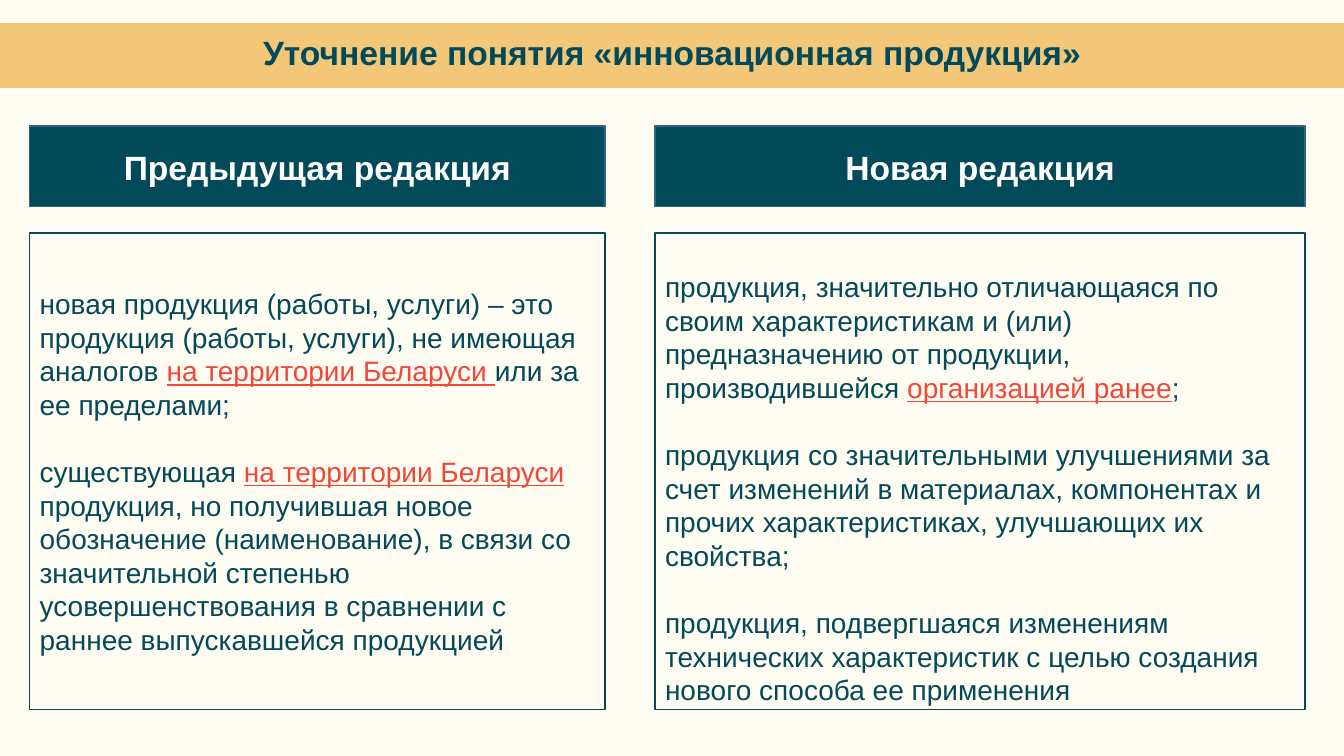
"""Build a slide comparing two wordings of a definition."""
import dataclasses
import typing

import pptx
import pptx.dml.color
import pptx.enum.shapes
import pptx.enum.text
import pptx.util

Cm = pptx.util.Cm
Pt = pptx.util.Pt
RGBColor = pptx.dml.color.RGBColor
ALIGN = pptx.enum.text.PP_ALIGN

CREAM = RGBColor(0xFF, 0xFC, 0xF2)
GOLD = RGBColor(0xF2, 0xC7, 0x77)
TEAL = RGBColor(0x02, 0x49, 0x59)
BLUE = RGBColor(0x30, 0x66, 0x84)
WHITE = RGBColor(0xFF, 0xFF, 0xFF)
RED = RGBColor(0xF2, 0x47, 0x38)

WIDTH, HEIGHT = 33.87, 19.05
LEADING = Pt(24)
HEAD = {"name": "Arial", "size": Pt(24), "bold": True}
BODY = {"name": "Arial", "size": Pt(20), "bold": False}
LEFT = {"alignment": ALIGN.LEFT, "line_spacing": LEADING}
CENTER = {"alignment": ALIGN.CENTER}
Paras = tuple[tuple[str, ...], ...]


@dataclasses.dataclass(frozen=True)
class Panel:
    """A filled or outlined rectangle with text; odd runs are marked."""
    left: float
    top: float
    width: float
    height: float
    paras: Paras
    fill: typing.Optional[RGBColor]
    line: RGBColor
    color: RGBColor
    font: dict[str, typing.Any]
    layout: dict[str, typing.Any]
    weight: float = 1
    inset: float = 0.13


@dataclasses.dataclass(frozen=True)
class Column:
    """A heading over a definition."""
    left: float
    width: float
    title: str
    paras: Paras
    inset: float


COLUMNS = (
    Column(0.75, 14.5, "Предыдущая редакция", (
        ("новая продукция (работы, услуги) – это продукция (работы, услуги), "
         "не имеющая аналогов ", "на территории Беларуси ",
         "или за ее пределами;"),
        ("существующая ", "на территории Беларуси ",
         "продукция, но получившая новое обозначение (наименование), в связи "
         "со значительной степенью усовершенствования в сравнении с раннее "
         "выпускавшейся продукцией"),
    ), 0.13),
    Column(16.51, 16.38, "Новая редакция", (
        ("продукция, значительно отличающаяся по своим характеристикам и "
         "(или) предназначению от продукции, производившейся ",
         "организацией ранее", ";"),
        ("продукция со значительными улучшениями за счет изменений в "
         "материалах, компонентах и прочих характеристиках, улучшающих их "
         "свойства;",),
        ("продукция, подвергшаяся изменениям технических характеристик с "
         "целью создания нового способа ее применения",),
    ), 0.97),
)


def apply(target: typing.Any, values: dict[str, typing.Any]) -> None:
    """Set each named attribute on the target."""
    for name, value in values.items():
        setattr(target, name, value)


def write(frame: typing.Any, panel: Panel) -> None:
    """Fill a text frame with the panel's paragraphs."""
    apply(frame, {
        "word_wrap": True,
        "vertical_anchor": pptx.enum.text.MSO_ANCHOR.MIDDLE,
        "margin_top": Cm(panel.inset),
    })
    for row, runs in enumerate(panel.paras):
        para = frame.add_paragraph() if row else frame.paragraphs[0]
        apply(para, panel.layout)
        if row:
            para.space_before = LEADING
        for index, text in enumerate(runs):
            marked = index % 2 == 1
            run = para.add_run()
            run.text = text
            apply(run.font, {**panel.font, "underline": marked})
            run.font.color.rgb = RED if marked else panel.color


def draw(slide: typing.Any, panel: Panel) -> None:
    """Add one panel to the slide."""
    shape = slide.shapes.add_shape(
        pptx.enum.shapes.MSO_SHAPE.RECTANGLE, Cm(panel.left), Cm(panel.top),
        Cm(panel.width), Cm(panel.height))
    shape.shadow.inherit = False
    if panel.fill is None:
        shape.fill.background()
    else:
        shape.fill.solid()
        shape.fill.fore_color.rgb = panel.fill
    shape.line.color.rgb = panel.line
    shape.line.width = Pt(panel.weight)
    write(shape.text_frame, panel)


def main() -> None:
    """Build and save the slide."""
    deck = pptx.Presentation()
    apply(deck, {"slide_width": Cm(WIDTH), "slide_height": Cm(HEIGHT)})
    slide = deck.slides.add_slide(deck.slide_layouts[6])
    slide.background.fill.solid()
    slide.background.fill.fore_color.rgb = CREAM
    draw(slide, Panel(
        0, 0.61, WIDTH, 1.57,
        (("Уточнение понятия «инновационная продукция»",),),
        GOLD, GOLD, TEAL, HEAD, {**CENTER, "line_spacing": LEADING}, 2.25))
    for col in COLUMNS:
        draw(slide, Panel(col.left, 3.18, col.width, 2.03, ((col.title,),),
                          TEAL, BLUE, WHITE, HEAD, CENTER))
        draw(slide, Panel(col.left, 5.87, col.width, 12.01, col.paras,
                          None, TEAL, TEAL, BODY, LEFT, inset=col.inset))
    deck.save("out.pptx")


if __name__ == "__main__":
    main()
